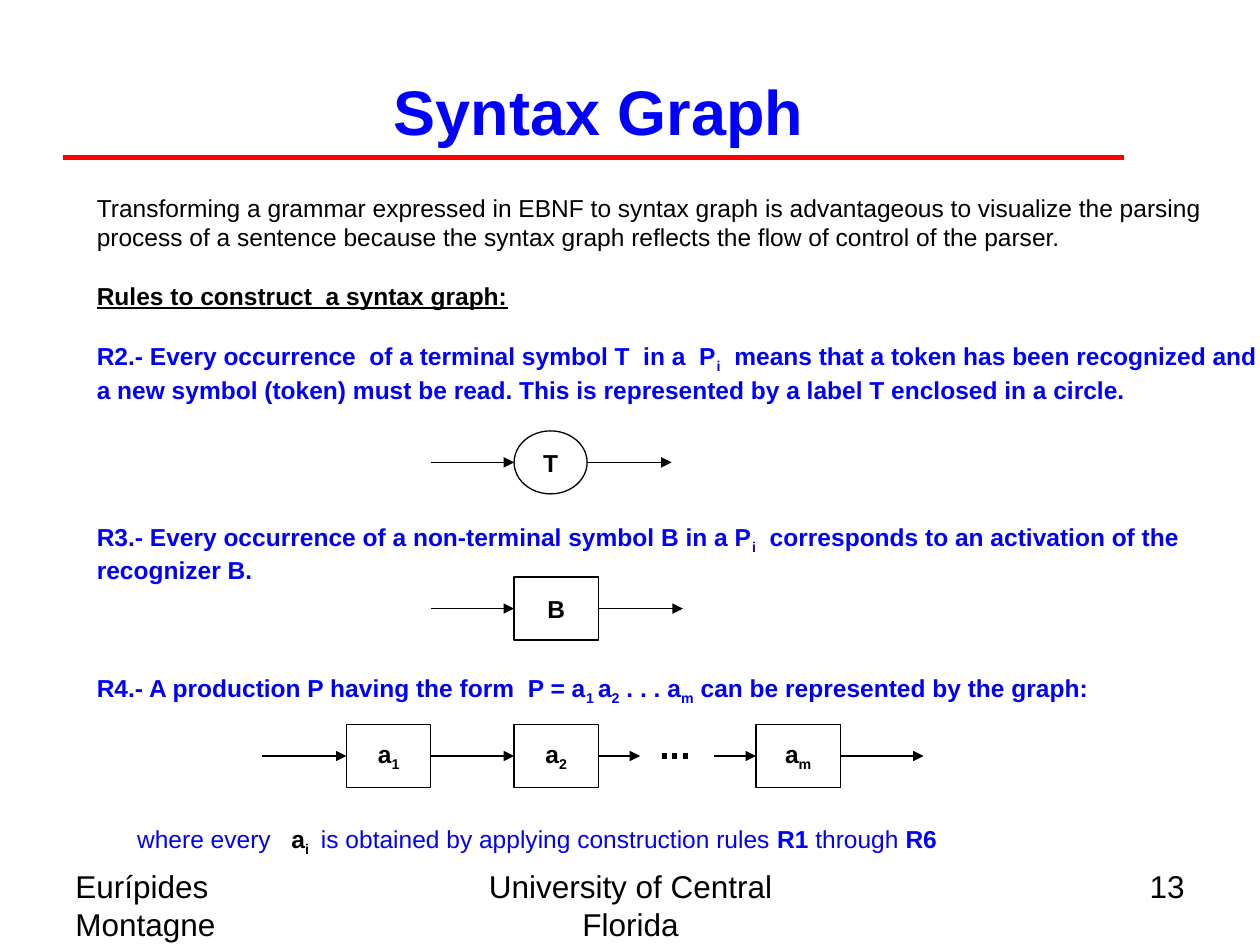
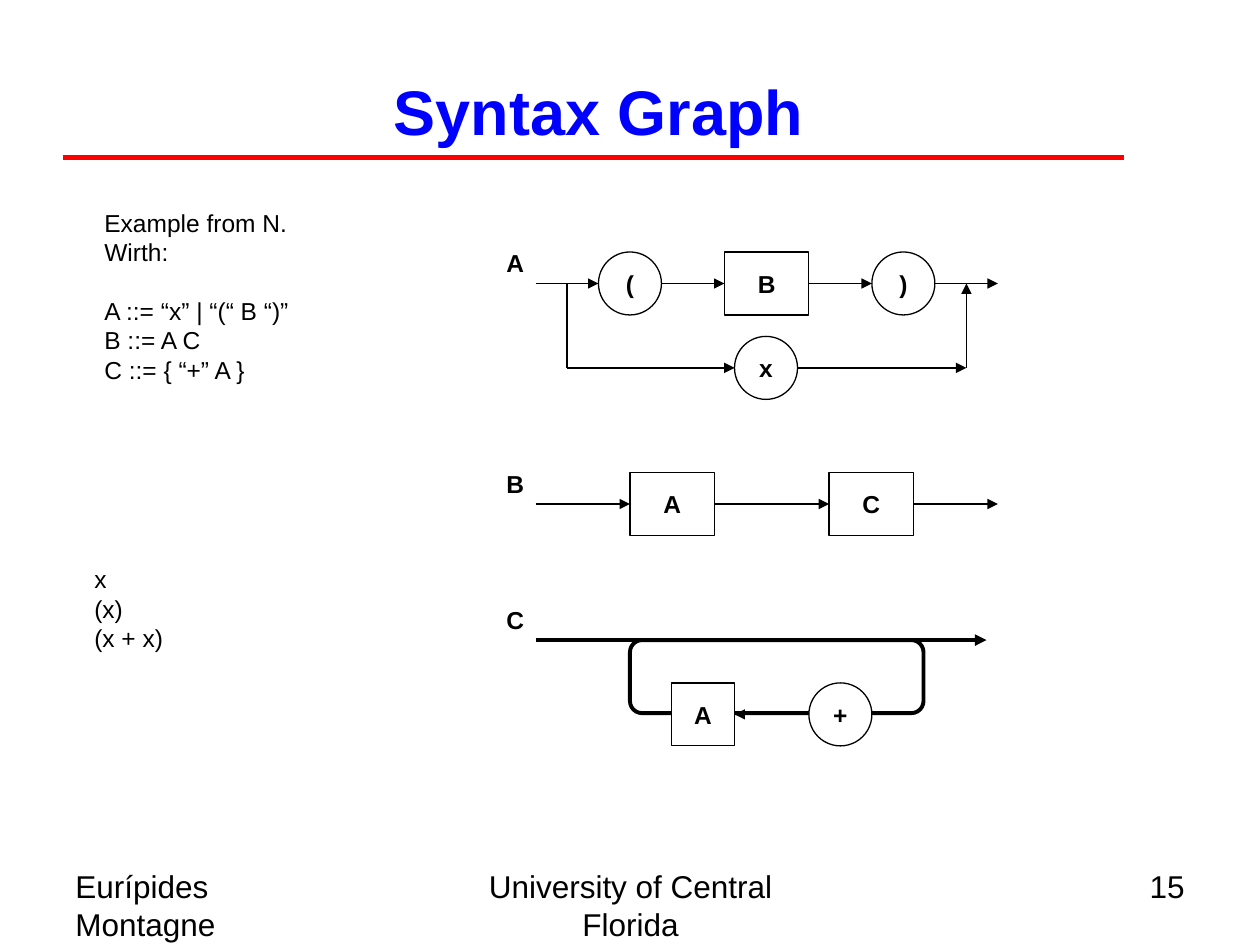
from dataclasses import dataclass

from lxml import etree
from pptx import Presentation
from pptx import util as u
from pptx.dml.color import RGBColor
from pptx.enum import dml, shapes, text
from pptx.oxml import ns
from pptx.shapes.autoshape import Shape
from pptx.shapes.connector import Connector
from pptx.slide import Slide
from pptx.util import Inches

Point = tuple[float, float]
Stop = Shape | Point
RECT = shapes.MSO_SHAPE.RECTANGLE
OVAL = shapes.MSO_SHAPE.OVAL
LEFT, CENTER, RIGHT = text.PP_ALIGN.LEFT, text.PP_ALIGN.CENTER, text.PP_ALIGN.RIGHT


@dataclass(frozen=True)
class Theme:
    font: str = "Arial"
    black: RGBColor = RGBColor(0, 0, 0)
    blue: RGBColor = RGBColor(0, 0, 255)
    red: RGBColor = RGBColor(255, 0, 0)
    white: RGBColor = RGBColor(255, 255, 255)
    title: float = 36
    footer: float = 18
    body: float = 14
    thin: float = 0.75
    thick: float = 2.25
    rule: float = 3
    gap: float = 16.8


@dataclass(frozen=True)
class Box:
    x: float
    y: float
    w: float
    h: float

    def lengths(self) -> tuple:
        return tuple(Inches(v) for v in (self.x, self.y, self.w, self.h))


@dataclass(frozen=True)
class Symbol:
    label: str
    box: Box
    kind: shapes.MSO_SHAPE = RECT


@dataclass(frozen=True)
class Footer:
    label: str
    box: Box
    align: text.PP_ALIGN


T = Theme()
FOOTERS = (
    Footer("Eurípides Montagne", Box(0.5, 6.83, 2.33, 0.52), LEFT),
    Footer("University of Central Florida", Box(3.42, 6.83, 3.17, 0.52), CENTER),
    Footer("{number}", Box(7.17, 6.83, 2.33, 0.52), RIGHT),
)


def write(p, content: str, *, size: float = T.body, color: RGBColor = T.black,
          bold: bool = False, underline: bool = False,
          align: text.PP_ALIGN = LEFT, before: float = 0) -> None:
    p.alignment = align
    p.space_before = u.Pt(before)
    for i, part in enumerate(content.split("~")):
        if not part:
            continue
        r = p.add_run()
        r.text = part
        r.font.name = T.font
        r.font.size = u.Pt(size)
        r.font.bold = bold
        r.font.underline = underline
        r.font.color.rgb = color
        if i % 2:
            r.font._element.set("baseline", "-25000")


def add_text(s: Slide, box: Box, *lines: str, **fmt):
    tf = s.shapes.add_textbox(*box.lengths()).text_frame
    tf.word_wrap = True
    for i, line in enumerate(lines):
        write(tf.add_paragraph() if i else tf.paragraphs[0], line, **fmt)
    return tf


def add_symbol(s: Slide, symbol: Symbol, *, filled: bool = False,
               width: float = T.thin) -> Shape:
    sp = s.shapes.add_shape(symbol.kind, *symbol.box.lengths())
    sp.shadow.inherit = False
    if filled:
        sp.fill.solid()
        sp.fill.fore_color.rgb = T.white
    else:
        sp.fill.background()
    sp.line.color.rgb = T.black
    sp.line.width = u.Pt(width)
    tf = sp.text_frame
    tf.margin_left = tf.margin_right = tf.margin_top = tf.margin_bottom = 0
    tf.vertical_anchor = text.MSO_ANCHOR.MIDDLE
    if symbol.label:
        write(tf.paragraphs[0], symbol.label, bold=True, align=CENTER)
    return sp


def center_x(stop: Stop) -> int:
    return Inches(stop[0]) if isinstance(stop, tuple) else stop.left + stop.width // 2


def edge(stop: Stop, toward: Stop) -> tuple[int, int]:
    if isinstance(stop, tuple):
        return Inches(stop[0]), Inches(stop[1])
    x = stop.left + (stop.width if center_x(toward) > center_x(stop) else 0)
    return x, stop.top + stop.height // 2


def add_line(s: Slide, start: Stop, end: Stop, *, color: RGBColor = T.black,
             width: float = T.thin, head: bool = True) -> Connector:
    c = s.shapes.add_connector(shapes.MSO_CONNECTOR.STRAIGHT,
                               *edge(start, end), *edge(end, start))
    for stop, other, join in ((start, end, c.begin_connect), (end, start, c.end_connect)):
        if not isinstance(stop, tuple) and stop.auto_shape_type == RECT:
            join(stop, 3 if center_x(other) > center_x(stop) else 1)
    c.line.color.rgb = color
    c.line.width = u.Pt(width)
    if head:
        etree.SubElement(c.line._get_or_add_ln(), ns.qn("a:tailEnd"), type="triangle")
    etree.SubElement(c._element.spPr, ns.qn("a:effectLst"))
    return c


def add_chain(s: Slide, *stops: Stop) -> None:
    for start, end in zip(stops, stops[1:]):
        add_line(s, start, end)


def new_slide(prs, number: int) -> Slide:
    s = prs.slides.add_slide(prs.slide_layouts[5])
    sp = s.shapes.title
    sp.left, sp.top, sp.width, sp.height = Box(0.25, 0.25, 9, 1.25).lengths()
    sp.text_frame.vertical_anchor = text.MSO_ANCHOR.MIDDLE
    write(sp.text_frame.paragraphs[0], "Syntax Graph", size=T.title,
          color=T.blue, bold=True, align=CENTER)
    add_line(s, (0.5, 1.25), (8.92, 1.25), color=T.red, width=T.rule, head=False)
    for f in FOOTERS:
        add_text(s, f.box, f.label.format(number=number), size=T.footer, align=f.align)
    return s


def build_rules(prs) -> None:
    s = new_slide(prs, 13)
    tf = add_text(
        s, Box(0.67, 1.48, 9.3, 1.1),
        "Transforming a grammar expressed in EBNF to syntax graph is advantageous to visualize the parsing",
        "process of a sentence because the syntax graph reflects the flow of control of the parser.")
    write(tf.add_paragraph(), "Rules to construct  a syntax graph:",
          bold=True, underline=True, before=T.gap)
    rules = (
        (2.66, "R2.- Every occurrence  of a terminal symbol T  in a  P~i~  means that a token has been recognized and",
         "a new symbol (token) must be read. This is represented by a label T enclosed in a circle."),
        (4.09, "R3.- Every occurrence of a non-terminal symbol B in a P~i~  corresponds to an activation of the",
         "recognizer B."),
        (5.29, "R4.- A production P having the form  P = a~1 ~a~2~ . . . a~m~ can be represented by the graph:"),
    )
    for y, *lines in rules:
        add_text(s, Box(0.67, y, 9.5, 0.3 * len(lines)), *lines, color=T.blue, bold=True)

    terminal = add_symbol(s, Symbol("T", Box(4.08, 3.42, 0.58, 0.5), OVAL))
    add_chain(s, (3.42, 3.67), terminal, (5.33, 3.67))
    recognizer = add_symbol(s, Symbol("B", Box(4.08, 4.58, 0.67, 0.5)))
    add_chain(s, (3.42, 4.83), recognizer, (5.42, 4.83))

    first, second, last = (
        add_symbol(s, Symbol(f"a~{sub}~", Box(x, 5.75, 0.67, 0.5)))
        for sub, x in (("1", 2.75), ("2", 4.08), ("m", 6)))
    add_chain(s, (2.08, 6), first, second, (5.08, 6))
    dots = add_line(s, (5.25, 6), (5.5, 6), width=T.rule, head=False)
    dots.line.dash_style = dml.MSO_LINE.ROUND_DOT
    add_chain(s, (5.67, 6), last, (7.33, 6))

    p = add_text(s, Box(0.99, 6.49, 7, 0.33)).paragraphs[0]
    write(p, "where every   ", color=T.blue)
    write(p, "a~i   ~", bold=True)
    write(p, "is obtained by applying construction rules ", color=T.blue)
    write(p, "R1", color=T.blue, bold=True)
    write(p, " through ", color=T.blue)
    write(p, "R6", color=T.blue, bold=True)


def build_example(prs) -> None:
    s = new_slide(prs, 15)
    tf = add_text(s, Box(0.73, 1.6, 2, 1.26), "Example from N. Wirth:")
    for i, line in enumerate(("A ::= “x” | “(“ B “)”", "B ::= A C", "C ::= { “+” A }")):
        write(tf.add_paragraph(), line, before=0 if i else T.gap)
    add_text(s, Box(0.65, 4.43, 1, 0.8), "x", "(x)", "(x + x)")
    for name, y in (("A", 1.92), ("B", 3.67), ("C", 4.75)):
        add_text(s, Box(3.92, y, 0.34, 0.33), name, bold=True)

    opening, inner, closing, x = (add_symbol(s, symbol) for symbol in (
        Symbol("(", Box(4.75, 2, 0.5, 0.5), OVAL),
        Symbol("B", Box(5.75, 2, 0.67, 0.5)),
        Symbol(")", Box(6.92, 2, 0.5, 0.5), OVAL),
        Symbol("x", Box(5.83, 2.67, 0.5, 0.5), OVAL)))
    add_chain(s, (4.25, 2.25), opening, inner, closing, (7.92, 2.25))
    add_line(s, (4.5, 2.25), (4.5, 2.92), head=False)
    add_chain(s, (4.5, 2.92), x, (7.67, 2.92), (7.67, 2.25))

    a, c = (add_symbol(s, Symbol(name, Box(left, 3.75, 0.67, 0.5)))
            for name, left in (("A", 5), ("C", 6.58)))
    add_chain(s, (4.25, 4), a, c, (7.92, 4))

    add_line(s, (4.25, 5.08), (7.83, 5.08), width=T.thick)
    add_symbol(s, Symbol("", Box(5, 5.08, 2.33, 0.58),
                         shapes.MSO_SHAPE.FLOWCHART_ALTERNATE_PROCESS), width=T.thick)
    repeated = add_symbol(s, Symbol("A", Box(5.33, 5.42, 0.5, 0.5)), filled=True)
    add_line(s, (6.08, 5.67), repeated)
    add_symbol(s, Symbol("+", Box(6.42, 5.42, 0.5, 0.5), OVAL), filled=True)


def main() -> None:
    prs = Presentation()
    prs.slide_width, prs.slide_height = Inches(10), Inches(7.5)
    build_rules(prs)
    build_example(prs)
    prs.save("out.pptx")


if __name__ == "__main__":
    main()
